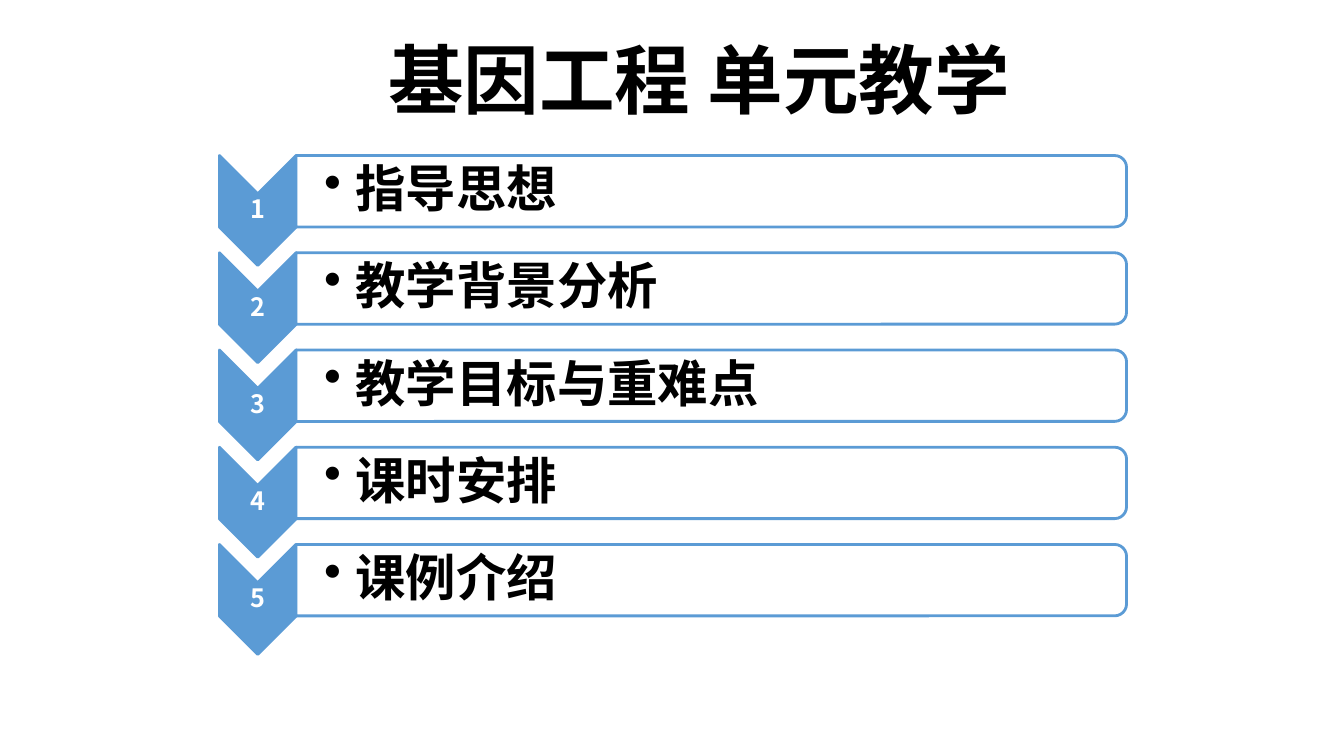
from lxml import etree
from pptx import Presentation
from pptx.dml.color import RGBColor
from pptx.enum import shapes, text
from pptx.oxml.ns import qn
from pptx.util import Cm, Pt

COLORS = {"blue": "5B9BD5", "white": "FFFFFF", "black": "000000"}
FONT = "Noto Sans CJK SC"
TOPICS = ["指导思想", "教学背景分析", "教学目标与重难点", "课时安排", "课例介绍"]
ROW_PITCH = 2.45
CHEVRON_WIDTH, CHEVRON_HEIGHT = 1.93, 2.77
BAR_HEIGHT = 1.8


def color(name):
    return RGBColor.from_string(COLORS[name])


def add_rotated(parent, kind, left, top, width, height, fill):
    """Place a shape turned by 90° so that it covers the given box."""
    shape = parent.shapes.add_shape(
        kind, Cm(left + (width - height) / 2), Cm(top + (height - width) / 2),
        Cm(height), Cm(width))
    shape.rotation = 90
    shape.shadow.inherit = False
    shape.fill.solid()
    shape.fill.fore_color.rgb = color(fill)
    shape.line.color.rgb = color("blue")
    shape.line.width = Pt(2)
    return shape


def add_text(parent, left, top, width, height, words, size, fill, bullet=False):
    box = parent.shapes.add_textbox(Cm(left), Cm(top), Cm(width), Cm(height))
    frame = box.text_frame
    frame.word_wrap = True
    paragraph = frame.paragraphs[0]
    paragraph.text = words
    properties = paragraph._p.get_or_add_pPr()
    if bullet:
        properties.set("marL", str(Cm(0.79)))
        properties.set("indent", str(-Cm(0.79)))
        etree.SubElement(properties, qn("a:buChar"), char="•")
    else:
        paragraph.alignment = text.PP_ALIGN.CENTER
    font = paragraph.font
    font.name, font.size, font.bold = FONT, Pt(size), True
    font.color.rgb = color(fill)
    # East Asian typeface follows the Latin one
    latin = properties.find(qn("a:defRPr")).find(qn("a:latin"))
    latin.addnext(latin.makeelement(qn("a:ea"), {"typeface": FONT}))
    return frame


def set_row_text(frame, left_inset, inset):
    frame.vertical_anchor = text.MSO_ANCHOR.MIDDLE
    frame.margin_left = Cm(left_inset)
    frame.margin_right = frame.margin_top = frame.margin_bottom = Cm(inset)
    frame.paragraphs[0].line_spacing = 0.9


def add_title(slide, left, top, width, height):
    frame = add_text(slide, left, top, width, height, "基因工程 单元教学", 54, "black")
    frame.auto_size = text.MSO_AUTO_SIZE.SHAPE_TO_FIT_TEXT


def add_topic_row(group, left, top, width, number, topic):
    # Numbered chevron
    add_rotated(group, shapes.MSO_SHAPE.CHEVRON, left, top,
                CHEVRON_WIDTH, CHEVRON_HEIGHT, "blue")
    frame = add_text(group, left, top + 0.97, CHEVRON_WIDTH, 0.84,
                     str(number), 18, "white")
    set_row_text(frame, 0.03, 0.03)

    # Topic bar, rounded on the right
    bar_left, bar_width = left + CHEVRON_WIDTH, width - CHEVRON_WIDTH
    bar = add_rotated(group, shapes.MSO_SHAPE.ROUND_2_SAME_RECTANGLE, bar_left, top,
                      bar_width, BAR_HEIGHT, "white")
    fill = bar._element.spPr.find(qn("a:solidFill"))
    etree.SubElement(fill[0], qn("a:alpha"), val="90000")
    frame = add_text(group, bar_left, top + 0.09, bar_width - 0.09, BAR_HEIGHT - 0.18,
                     topic, 36, "black", bullet=True)
    set_row_text(frame, 0.71, 0.08)


def add_topic_list(slide, left, top, width):
    group = slide.shapes.add_group_shape()
    for index, topic in enumerate(TOPICS):
        add_topic_row(group, left, top + index * ROW_PITCH, width, index + 1, topic)


def main():
    presentation = Presentation()
    presentation.slide_width, presentation.slide_height = Cm(33.87), Cm(19.05)
    slide = presentation.slides.add_slide(presentation.slide_layouts[6])
    add_topic_list(slide, 5.53, 3.92, 22.86)
    add_title(slide, 7.32, 0.71, 20.6, 2.57)
    presentation.save("out.pptx")


if __name__ == "__main__":
    main()
